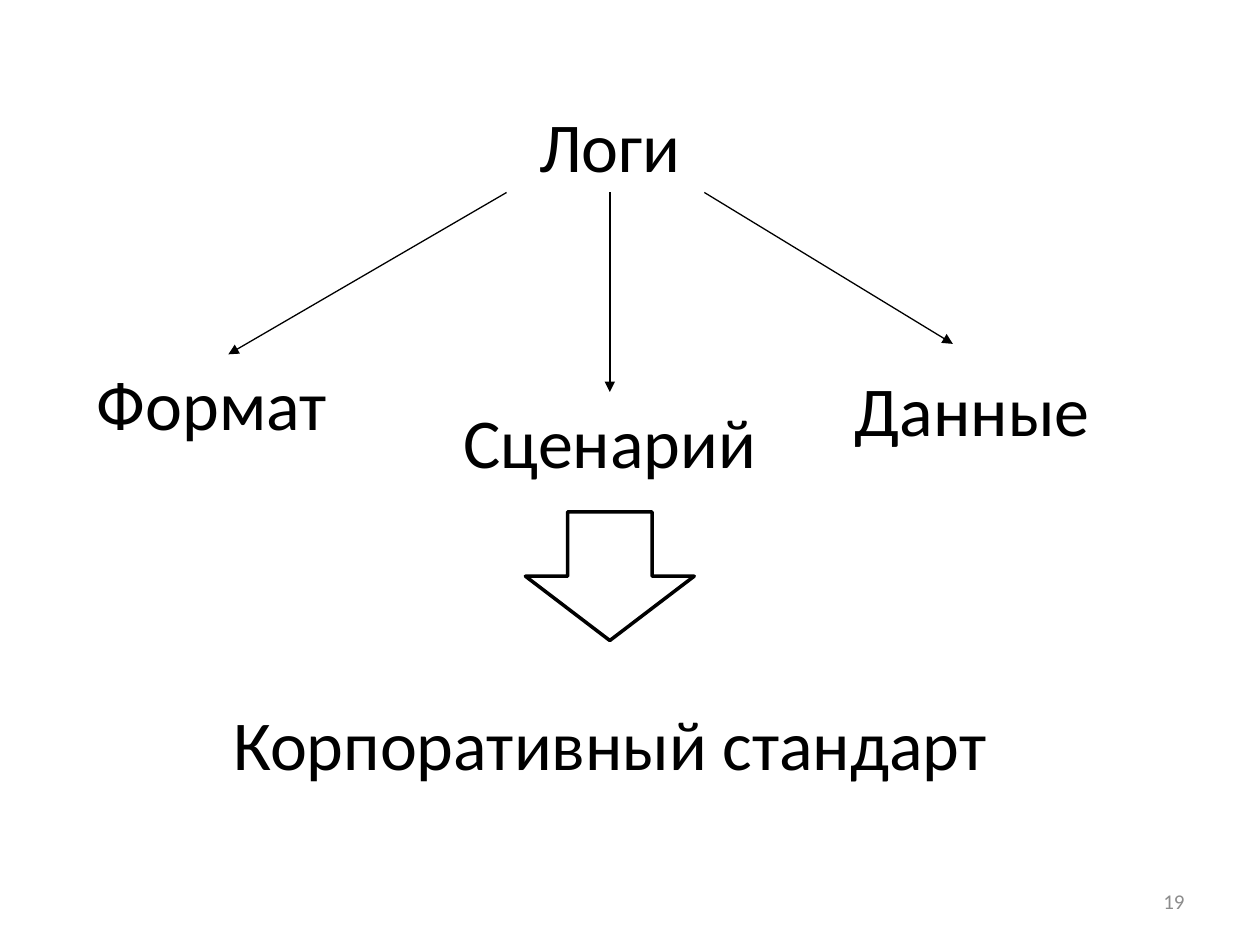
import pptx
import pptx.dml.color
import pptx.enum.shapes
import pptx.enum.text
import pptx.oxml
import pptx.oxml.ns
import pptx.util

Pt = pptx.util.Pt
ALIGN = pptx.enum.text.PP_ALIGN
ANCHOR = pptx.enum.text.MSO_ANCHOR

COLORS = {"ink": "000000", "page_number": "8C8C8C"}
FONT = "Calibri"
AXIS = 348.5  # vertical centre line of the diagram
LABEL_WIDTH, LABEL_HEIGHT = 153, 55
TITLE_TOP = 55
BRANCH_TOP = TITLE_TOP + LABEL_HEIGHT

# text, centre, top, width, arrow start, arrow tip
BRANCHES = [
    ("Формат", 121, 202.5, LABEL_WIDTH, 289.5, (130.5, 202.5)),
    ("Сценарий", AXIS, 224, 206.5, AXIS, (AXIS, 224)),
    ("Данные", 555.5, 206, LABEL_WIDTH, 402.5, (544.5, 196.5)),
]


def rgb(name):
    return pptx.dml.color.RGBColor.from_string(COLORS[name])


def write(holder, text, size=40, color="ink", align=ALIGN.CENTER, anchor=ANCHOR.TOP):
    frame = holder.text_frame
    frame.text = text
    frame.word_wrap = True
    frame.auto_size = pptx.enum.text.MSO_AUTO_SIZE.NONE
    frame.vertical_anchor = anchor
    paragraph = frame.paragraphs[0]
    paragraph.alignment = align
    font = paragraph.runs[0].font
    font.name = FONT
    font.size = Pt(size)
    font.color.rgb = rgb(color)


def add_title(slide, text):
    title = slide.shapes.title
    title.left, title.top = Pt(AXIS - LABEL_WIDTH / 2), Pt(TITLE_TOP)
    title.width, title.height = Pt(LABEL_WIDTH), Pt(LABEL_HEIGHT)
    write(title, text)


def add_label(slide, text, center, top, width):
    label = slide.shapes.add_textbox(
        Pt(center - width / 2), Pt(top), Pt(width), Pt(LABEL_HEIGHT))
    write(label, text)


def add_branch_arrow(slide, start, tip):
    branch = slide.shapes.add_connector(
        pptx.enum.shapes.MSO_CONNECTOR.STRAIGHT, *map(Pt, start + tip))
    branch.line.color.rgb = rgb("ink")
    branch.line.width = Pt(0.75)
    # Arrowhead and no shadow
    head = pptx.oxml.parse_xml(
        f'<a:tailEnd {pptx.oxml.ns.nsdecls("a")} type="triangle"/>')
    branch.line._get_or_add_ln().append(head)
    properties = branch._element.spPr
    properties.append(pptx.oxml.parse_xml(
        f'<a:effectLst {pptx.oxml.ns.nsdecls("a")}/>'))


def add_block_arrow(slide, top, width, height):
    block_arrow = slide.shapes.add_shape(
        pptx.enum.shapes.MSO_SHAPE.DOWN_ARROW,
        Pt(AXIS - width / 2), Pt(top), Pt(width), Pt(height))
    block_arrow.shadow.inherit = False
    block_arrow.fill.background()
    block_arrow.line.color.rgb = rgb("ink")
    block_arrow.line.width = Pt(2)


def add_page_number(slide, number):
    page_number = slide.shapes.add_textbox(Pt(516), Pt(500.5), Pt(168), Pt(29))
    write(page_number, number, 12, "page_number", ALIGN.RIGHT, ANCHOR.MIDDLE)


def main():
    deck = pptx.Presentation()
    deck.slide_width, deck.slide_height = Pt(720), Pt(540)
    slide = deck.slides.add_slide(deck.slide_layouts[5])  # Title Only

    # Logs and the three branches
    add_title(slide, "Логи")
    for text, center, top, width, start, tip in BRANCHES:
        add_branch_arrow(slide, (start, BRANCH_TOP), tip)
        add_label(slide, text, center, top, width)

    # Result
    add_block_arrow(slide, 292.5, 96.5, 73.5)
    add_label(slide, "Корпоративный стандарт", AXIS, 396.5, 477.5)

    add_page_number(slide, "19")
    deck.save("out.pptx")


if __name__ == "__main__":
    main()
